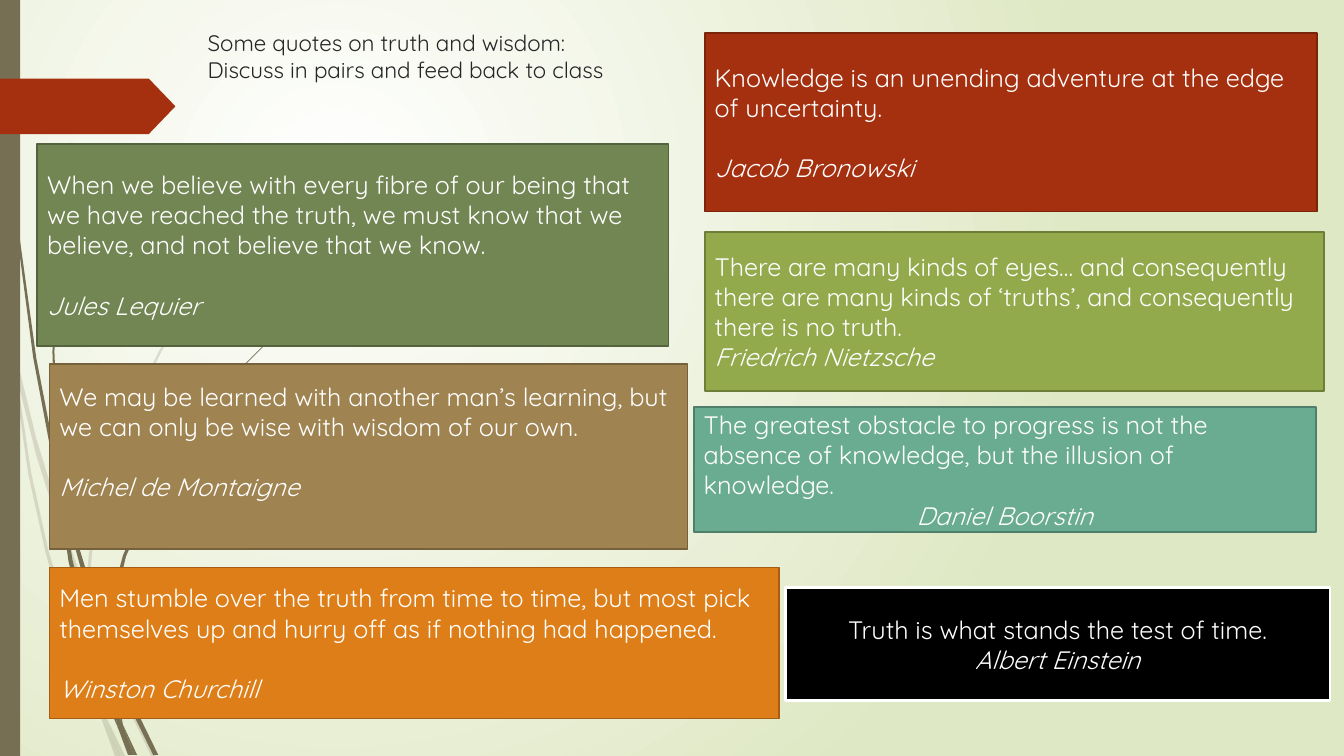
from pptx import Presentation
from pptx.dml.color import RGBColor
from pptx.enum.shapes import MSO_SHAPE
from pptx.enum.text import MSO_ANCHOR, PP_ALIGN
from pptx.oxml import parse_xml
from pptx.oxml.ns import nsdecls, qn
from pptx.util import Inches, Pt
from lxml.etree import SubElement

COLORS = {
    "white": "FFFFFF", "pale": "DFE8C4", "bark": "766F54", "ink": "262626",
    "black": "000000", "red": "A53010", "red_edge": "7A240C",
    "orange": "DE7E18", "orange_edge": "A45D12", "lime": "92AA4C", "lime_edge": "6C7E38",
    "moss": "728653", "moss_edge": "54633D", "tan": "9F8351", "tan_edge": "76613C",
    "teal": "6AAC91", "teal_edge": "4E7F6B",
}

PALE_WISPS = [
    [(0.11, 3.5), (0.09, 3.22), (0, 2.82), (0, 2.99), (0.1, 3.44)],
    [(0.58, 5.22), (0.84, 5.99), (0.85, 5.86), (0.62, 5.2), (0.36, 4.35), (0.14, 3.45),
     (0.17, 3.76), (0.36, 4.52)],
    [(0.92, 6.07), (0.88, 5.96), (0.88, 6.1), (1.23, 6.94), (1.5, 7.5), (1.55, 7.5),
     (1.27, 6.92)],
    [(1.19, 7.5), (1.24, 7.5), (1.05, 7.11)],
    [(0.93, 6.83), (0.7, 6.19), (0.48, 5.46), (0.31, 4.69), (0.17, 3.76), (0.11, 3.5),
     (0.28, 4.7), (0.45, 5.47), (0.65, 6.21), (0.92, 6.93), (1.01, 7.14), (0.99, 7.07)],
    [(0.88, 5.84), (0.94, 5.22), (1.1, 4.62), (1.33, 4.04), (1.6, 3.49), (1.93, 2.95),
     (2.29, 2.45), (2.68, 1.98), (2.9, 1.75), (3.12, 1.54), (3.12, 1.53), (2.89, 1.75),
     (2.68, 1.97), (2.28, 2.44), (1.91, 2.94), (1.58, 3.48), (1.3, 4.03), (1.07, 4.61),
     (0.91, 5.21), (0.85, 5.84), (0.88, 5.96)],
    [(1.01, 7.14), (1.14, 7.5), (1.19, 7.5)],
    [(0.96, 6.92), (0.93, 6.83), (0.99, 7.07), (1.01, 7.14), (1.19, 7.5), (1.05, 7.11)],
]

DARK_WISPS = [
    [(0.07, 1.1), (0.17, 2.33), (0.33, 3.55), (0.56, 4.77), (0.57, 4.81), (0.55, 4.53),
     (0.36, 3.55), (0.19, 2.32), (0.08, 1.09), (0.05, 0.48), (0.04, 0), (0.03, 0),
     (0.04, 0.48)],
    [(0.88, 5.92), (1.06, 6.45), (1.06, 6.31), (0.93, 5.9), (0.75, 5.32), (0.6, 4.72),
     (0.64, 5.05)],
    [(1.13, 6.49), (1.1, 6.41), (1.11, 6.56), (1.32, 7.08), (1.52, 7.49), (1.57, 7.49),
     (1.36, 7.06)],
    [(1.1, 6.91), (0.98, 6.57), (0.72, 5.56), (0.64, 5.05), (0.57, 4.77), (0.68, 5.57),
     (0.93, 6.59), (1.11, 7.08), (1.17, 7.22), (1.16, 7.17)],
    [(0.6, 4.72), (0.58, 4.53), (0.54, 3.49), (0.58, 2.45), (0.63, 1.93), (0.7, 1.41),
     (0.62, 1.93), (0.56, 2.45), (0.52, 3.49), (0.55, 4.49)],
    [(1.33, 7.49), (1.36, 7.49), (1.22, 7.19)],
    [(1.11, 6.33), (1.15, 5.93), (1.25, 5.52), (1.58, 4.76), (2.05, 4.06), (2.31, 3.74),
     (2.61, 3.44), (2.6, 3.44), (2.31, 3.73), (2.04, 4.05), (1.56, 4.74), (1.22, 5.51),
     (1.11, 5.92), (1.06, 6.31), (1.1, 6.41)],
    [(1.17, 7.22), (1.27, 7.49), (1.31, 7.49)],
    [(1.06, 6.45), (1.1, 6.91), (1.16, 7.06), (1.22, 7.19), (1.11, 6.56)],
    [(1.16, 7.06), (1.1, 6.91), (1.17, 7.22), (1.3, 7.49), (1.33, 7.49), (1.22, 7.19)],
]


class QuoteSlide:
    """Holds the type style and draws the elements of one slide."""

    font = "Quicksand"
    quote_size = 18
    line_height = 21.6

    def __init__(self, deck):
        self.page = deck.slides.add_slide(deck.slide_layouts[5])
        self.shapes = self.page.shapes

    def color(self, name):
        return RGBColor.from_string(COLORS[name])

    def background(self, inner, outer):
        fill = self.page.background.fill
        fill.gradient()
        for stop, name, position in zip(fill.gradient_stops, (inner, outer), (0, 1)):
            stop.color.rgb = self.color(name)
            stop.position = position
        gradient = self.page.element.find(".//" + qn("a:gradFill"))
        gradient.remove(gradient.find(qn("a:lin")))
        gradient.find(qn("a:gsLst")).addnext(parse_xml(
            f'<a:path {nsdecls("a")} path="circle">'
            '<a:fillToRect l="50000" t="50000" r="100000" b="100000"/></a:path>'))

    def paint(self, shape, fill, edge=None, width=1.25):
        shape.shadow.inherit = False
        shape.fill.solid()
        shape.fill.fore_color.rgb = self.color(fill)
        if edge:
            shape.line.color.rgb = self.color(edge)
            shape.line.width = Pt(width)
        else:
            shape.line.fill.background()

    def wisp(self, points, opacity=100):
        start, *rest = [(round(x * 100), round(y * 100)) for x, y in points]
        builder = self.shapes.build_freeform(*start, scale=Inches(0.01))
        builder.add_line_segments(rest)
        shape = builder.convert_to_shape()
        self.paint(shape, "bark")
        if opacity < 100:
            tint = shape.element.spPr.find(qn("a:solidFill"))[0]
            SubElement(tint, qn("a:alpha")).set("val", str(opacity * 1000))

    def block(self, kind, bounds, fill, edge=None, width=1.25):
        shape = self.shapes.add_shape(kind, *map(Inches, bounds))
        self.paint(shape, fill, edge, width)
        return shape

    def span(self, para, text, size, color, italic=False):
        run = para.add_run()
        run.text = text
        run.font.name = self.font
        run.font.size = Pt(size)
        run.font.italic = italic
        run.font.color.rgb = self.color(color)

    def title(self, bounds, lines):
        box = self.shapes.title
        box.left, box.top, box.width, box.height = map(Inches, bounds)
        box.text_frame.vertical_anchor = MSO_ANCHOR.TOP
        para = box.text_frame.paragraphs[0]
        para.alignment = PP_ALIGN.LEFT
        for index, line in enumerate(lines):
            if index:
                para.add_line_break()
            self.span(para, line, 16, "ink")

    def quote(self, bounds, fill, edge, text, author, gap=1, aligns="ll", bottom=0.05, width=1.25):
        box = self.block(MSO_SHAPE.RECTANGLE, bounds, fill, edge, width)
        frame = box.text_frame
        frame.word_wrap = True
        frame.vertical_anchor = MSO_ANCHOR.MIDDLE
        frame.margin_bottom = Inches(bottom)
        saying, credit = frame.paragraphs[0], frame.add_paragraph()
        for para, align in zip((saying, credit), aligns):
            para.alignment = PP_ALIGN.CENTER if align == "c" else PP_ALIGN.LEFT
        credit.space_before = Pt(gap * self.line_height)
        self.span(saying, text, self.quote_size, "white")
        self.span(credit, author, self.quote_size, "white", italic=True)


def main():
    deck = Presentation()
    deck.slide_width, deck.slide_height = Inches(13.33), Inches(7.5)
    slide = QuoteSlide(deck)
    slide.background("white", "pale")
    for points in PALE_WISPS:
        slide.wisp(points, opacity=20)
    for points in DARK_WISPS:
        slide.wisp(points)
    slide.block(MSO_SHAPE.RECTANGLE, (0, 0, 0.2, 7.5), "bark")
    arrow = slide.block(MSO_SHAPE.PENTAGON, (0, 0.78, 1.74, 0.55), "red")
    arrow.adjustments[0] = 0.48
    slide.title((1.96, 0.24, 9.75, 0.76),
                ["Some quotes on truth and wisdom:", "Discuss in pairs and feed back to class"])
    slide.quote((7.79, 5.83, 5.4, 1.12), "black", "white",
                "Truth is what stands the test of time.", "Albert Einstein",
                gap=0, aligns="cc", width=1.75)
    slide.quote((6.99, 0.33, 6.07, 1.77), "red", "red_edge",
                "Knowledge is an unending adventure at the edge of uncertainty.", "Jacob Bronowski")
    slide.quote((0.49, 5.63, 7.24, 1.5), "orange", "orange_edge",
                "Men stumble over the truth from time to time, but most pick themselves up "
                "and hurry off as if nothing had happened.", "Winston Churchill")
    slide.quote((6.99, 2.3, 6.14, 1.58), "lime", "lime_edge",
                "There are many kinds of eyes… and consequently there are many kinds of "
                "‘truths’, and consequently there is no truth.", "Friedrich Nietzsche", gap=0)
    slide.quote((0.37, 1.43, 6.26, 2), "moss", "moss_edge",
                "When we believe with every fibre of our being that we have reached the truth, "
                "we must know that we believe, and not believe that we know.", "Jules Lequier")
    slide.quote((0.49, 3.61, 6.33, 1.84), "tan", "tan_edge",
                "We may be learned with another man’s learning, but we can only be wise with "
                "wisdom of our own.", "Michel de Montaigne", bottom=0.35)
    slide.quote((6.88, 4.04, 6.17, 1.24), "teal", "teal_edge",
                "The greatest obstacle to progress is not the absence of knowledge, but the "
                "illusion of knowledge.", "Daniel Boorstin", gap=0, aligns="lc")
    deck.save("out.pptx")


if __name__ == "__main__":
    main()
